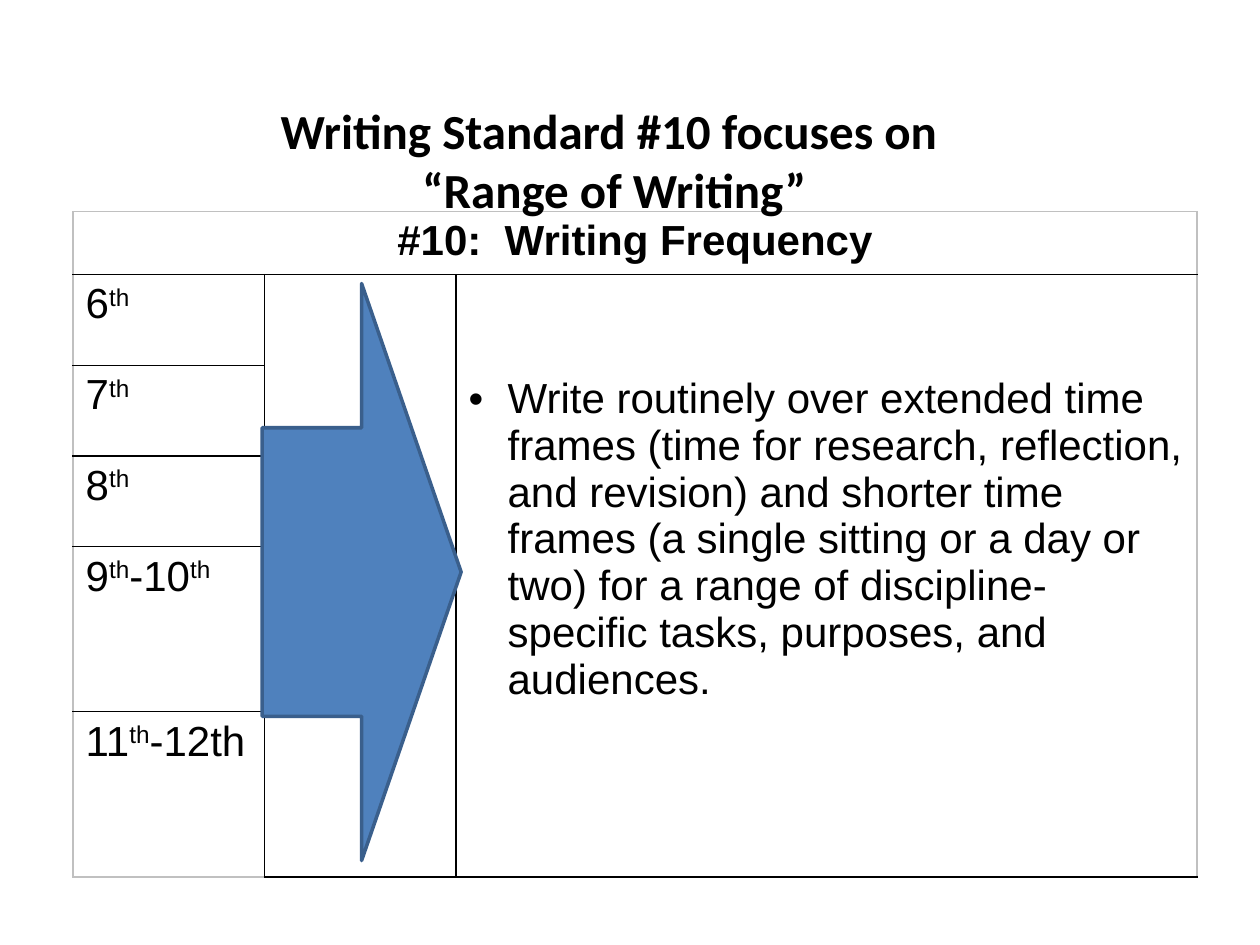
from lxml.etree import SubElement
from pptx import Presentation
from pptx.dml.color import RGBColor
from pptx.enum.shapes import MSO_SHAPE as Shape
from pptx.enum.text import MSO_ANCHOR as Anchor, PP_ALIGN as Align
from pptx.oxml.ns import qn
from pptx.util import Inches, Pt

COLORS = {
    "text": "000000",
    "paper": "FFFFFF",
    "grid": "000000",
    "frame": "C0C0C0",
    "arrow": "4F81BD",
    "arrow_edge": "3A5F8C",
}
GRADES = ["6^th^", "7^th^", "8^th^", "9^th^-10^th^", "11^th^-12th"]
COLUMN_WIDTHS = [1.52, 1.52, 5.88]
ROW_HEIGHTS = [0.5, 0.72, 0.72, 0.72, 1.31, 1.31]
HEADING = "#10:  Writing Frequency"
STANDARD = (
    "Write routinely over extended time frames (time for research, reflection, "
    "and revision) and shorter time frames (a single sitting or a day or two) "
    "for a range of discipline-specific tasks, purposes, and audiences."
)


def color(name):
    return RGBColor.from_string(COLORS[name])


def write(frame, *lines, font="Arial", size=24, bold=False,
          align=Align.LEFT, bullet=None):
    """Write one paragraph per line; text between carets is superscript."""
    frame.word_wrap = True
    for number, line in enumerate(lines):
        paragraph = frame.add_paragraph() if number else frame.paragraphs[0]
        paragraph.alignment = align
        if bullet:
            properties = paragraph._p.get_or_add_pPr()
            properties.set("marL", str(Inches(0.31)))
            properties.set("indent", str(-Inches(0.31)))
            SubElement(properties, qn("a:buFont"), typeface="Arial")
            SubElement(properties, qn("a:buChar"), char=bullet)
        for part, text in enumerate(line.split("^")):
            if not text:
                continue
            run = paragraph.add_run()
            run.text = text
            run.font.name, run.font.size, run.font.bold = font, Pt(size), bold
            run.font.color.rgb = color("text")
            if part % 2:
                run._r.get_or_add_rPr().set("baseline", "30000")


def style_cell(cell, row, column):
    """Grey lines on the outer frame, black lines inside."""
    outer = {
        "L": column == 0,
        "R": column == len(COLUMN_WIDTHS) - 1 or row == 0,
        "T": row == 0,
        "B": row == len(ROW_HEIGHTS) - 1,
    }
    properties = cell._tc.get_or_add_tcPr()
    for side, is_outer in outer.items():
        border = SubElement(properties, qn(f"a:ln{side}"), w=str(Pt(1)))
        fill = SubElement(border, qn("a:solidFill"))
        SubElement(fill, qn("a:srgbClr"),
                   val=COLORS["frame" if is_outer else "grid"])
    cell.fill.solid()
    cell.fill.fore_color.rgb = color("paper")


def add_standard_table(slide):
    table = slide.shapes.add_table(
        len(ROW_HEIGHTS), len(COLUMN_WIDTHS), Inches(0.58), Inches(1.68),
        Inches(sum(COLUMN_WIDTHS)), Inches(sum(ROW_HEIGHTS))).table
    table.first_row = table.horz_banding = False
    for column, width in zip(table.columns, COLUMN_WIDTHS):
        column.width = Inches(width)
    for row, height in zip(table.rows, ROW_HEIGHTS):
        row.height = Inches(height)
    for r in range(len(ROW_HEIGHTS)):
        for c in range(len(COLUMN_WIDTHS)):
            style_cell(table.cell(r, c), r, c)

    # Heading across the top; arrow and standard columns span all grades
    table.cell(0, 0).merge(table.cell(0, 2))
    for c in (1, 2):
        table.cell(1, c).merge(table.cell(len(GRADES), c))

    write(table.cell(0, 0).text_frame, HEADING, bold=True, align=Align.CENTER)
    for r, grade in enumerate(GRADES, start=1):
        write(table.cell(r, 0).text_frame, grade)
    standard = table.cell(1, 2)
    standard.margin_top = Inches(0.8)
    write(standard.text_frame, STANDARD, bullet="•")


def add_title(slide):
    title = slide.shapes.add_textbox(
        Inches(1.25), Inches(0.27), Inches(7.25), Inches(1.51)).text_frame
    title.vertical_anchor = Anchor.BOTTOM
    write(title, "Writing Standard #10 focuses on ", "“Range of Writing”",
          font="Calibri", size=28, bold=True, align=Align.CENTER)


def add_grade_arrow(slide):
    arrow = slide.shapes.add_shape(
        Shape.RIGHT_ARROW, Inches(2.08), Inches(2.25), Inches(1.58), Inches(4.58))
    arrow.shadow.inherit = False
    arrow.fill.solid()
    arrow.fill.fore_color.rgb = color("arrow")
    arrow.line.color.rgb = color("arrow_edge")
    arrow.line.width = Pt(2)


def main():
    deck = Presentation()
    deck.slide_width, deck.slide_height = Inches(10), Inches(7.5)
    slide = deck.slides.add_slide(deck.slide_layouts[6])
    add_standard_table(slide)
    add_title(slide)
    add_grade_arrow(slide)
    deck.save("out.pptx")


if __name__ == "__main__":
    main()
